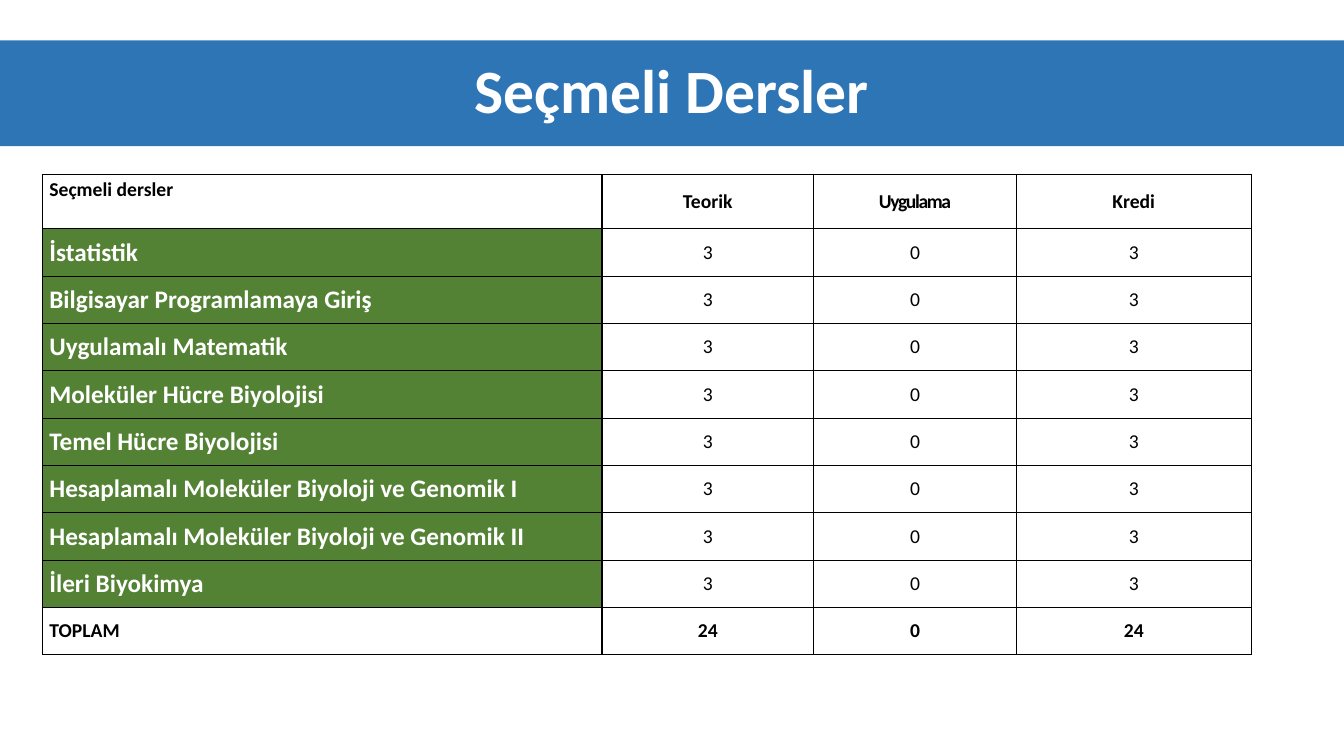
import pptx
import pptx.util
import pptx.dml.color
import pptx.enum.text
from lxml import etree
from pptx.oxml.ns import qn
from pptx.util import Inches, Pt

RGBColor = pptx.dml.color.RGBColor
Align = pptx.enum.text.PP_ALIGN
Anchor = pptx.enum.text.MSO_ANCHOR

BLUE = RGBColor(0x2E, 0x75, 0xB6)
GREEN = RGBColor(0x54, 0x82, 0x35)
WHITE = RGBColor(0xFF, 0xFF, 0xFF)
BLACK = RGBColor(0, 0, 0)

HEADS = ["Seçmeli dersler", "Teorik", "Uygulama", "Kredi"]
COURSES = [
    "İstatistik",
    "Bilgisayar Programlamaya Giriş",
    "Uygulamalı Matematik",
    "Moleküler Hücre Biyolojisi",
    "Temel Hücre Biyolojisi",
    "Hesaplamalı Moleküler Biyoloji ve Genomik I",
    "Hesaplamalı Moleküler Biyoloji ve Genomik II",
    "İleri Biyokimya",
]
HOURS = (3, 0, 3)
WIDTHS = [5.55, 2.1, 2.01, 2.33]
HEAD_H, ROW_H = 0.54, 0.47


class Page:
    font = "Calibri"

    def __init__(self, slide):
        self.slide = slide

    def label(self, para, text, size, color, bold, align):
        para.text = text
        para.alignment = align
        para.font.name = self.font
        para.font.size = Pt(size)
        para.font.bold = bold
        para.font.color.rgb = color

    def title(self, text):
        bar = self.slide.shapes.title
        bar.left, bar.top = Inches(0), Inches(0.4)
        bar.width, bar.height = Inches(13.33), Inches(1.05)
        bar.fill.solid()
        bar.fill.fore_color.rgb = BLUE
        bar.text_frame.vertical_anchor = Anchor.MIDDLE
        para = bar.text_frame.paragraphs[0]
        self.label(para, text, 44, WHITE, True, Align.CENTER)
        para.line_spacing = 0.9

    def border(self, cell):
        """Draw a thin black line on all four sides."""
        props = cell._tc.get_or_add_tcPr()
        for side in ("lnL", "lnR", "lnT", "lnB"):
            line = etree.SubElement(props, qn("a:" + side), w=str(Pt(1)))
            fill = etree.SubElement(line, qn("a:solidFill"))
            etree.SubElement(fill, qn("a:srgbClr"), val=str(BLACK))

    def cell(self, cell, text, size, color, bold, align, fill):
        self.border(cell)
        cell.margin_left = cell.margin_right = Inches(0.07)
        cell.margin_top = cell.margin_bottom = 0
        cell.vertical_anchor = Anchor.MIDDLE
        if fill:
            cell.fill.solid()
            cell.fill.fore_color.rgb = fill
        else:
            cell.fill.background()
        para = cell.text_frame.paragraphs[0]
        self.label(para, text, size, color, bold, align)

    def table(self, rows):
        high = HEAD_H + ROW_H * (len(rows) - 1)
        frame = self.slide.shapes.add_table(
            len(rows), len(WIDTHS), Inches(0.42), Inches(1.73),
            Inches(sum(WIDTHS)), Inches(high))
        table = frame.table
        table.first_row = table.horz_banding = False
        for col, width in zip(table.columns, WIDTHS):
            col.width = Inches(width)
        last = len(rows) - 1
        for r, row in enumerate(rows):
            table.rows[r].height = Inches(ROW_H if r else HEAD_H)
            for c, text in enumerate(row):
                inner = 0 < r < last
                course = inner and c == 0
                self.cell(
                    table.cell(r, c), str(text),
                    size=18 if course else 14,
                    color=WHITE if course else BLACK,
                    bold=course or not inner,
                    align=Align.CENTER if c else Align.LEFT,
                    fill=GREEN if course else None)
        return table


def main():
    deck = pptx.Presentation()
    deck.slide_width, deck.slide_height = Inches(13.33), Inches(7.5)
    page = Page(deck.slides.add_slide(deck.slide_layouts[5]))
    page.title("Seçmeli Dersler")

    totals = [hours * len(COURSES) for hours in HOURS]
    rows = [HEADS, *([name, *HOURS] for name in COURSES), ["TOPLAM", *totals]]
    table = page.table(rows)

    corner = table.cell(0, 0)
    corner.vertical_anchor = Anchor.TOP
    corner.margin_top = Inches(0.03)
    tight = table.cell(0, 2).text_frame.paragraphs[0].runs[0]
    tight._r.get_or_add_rPr().set("spc", "-100")

    deck.save("out.pptx")


if __name__ == "__main__":
    main()
